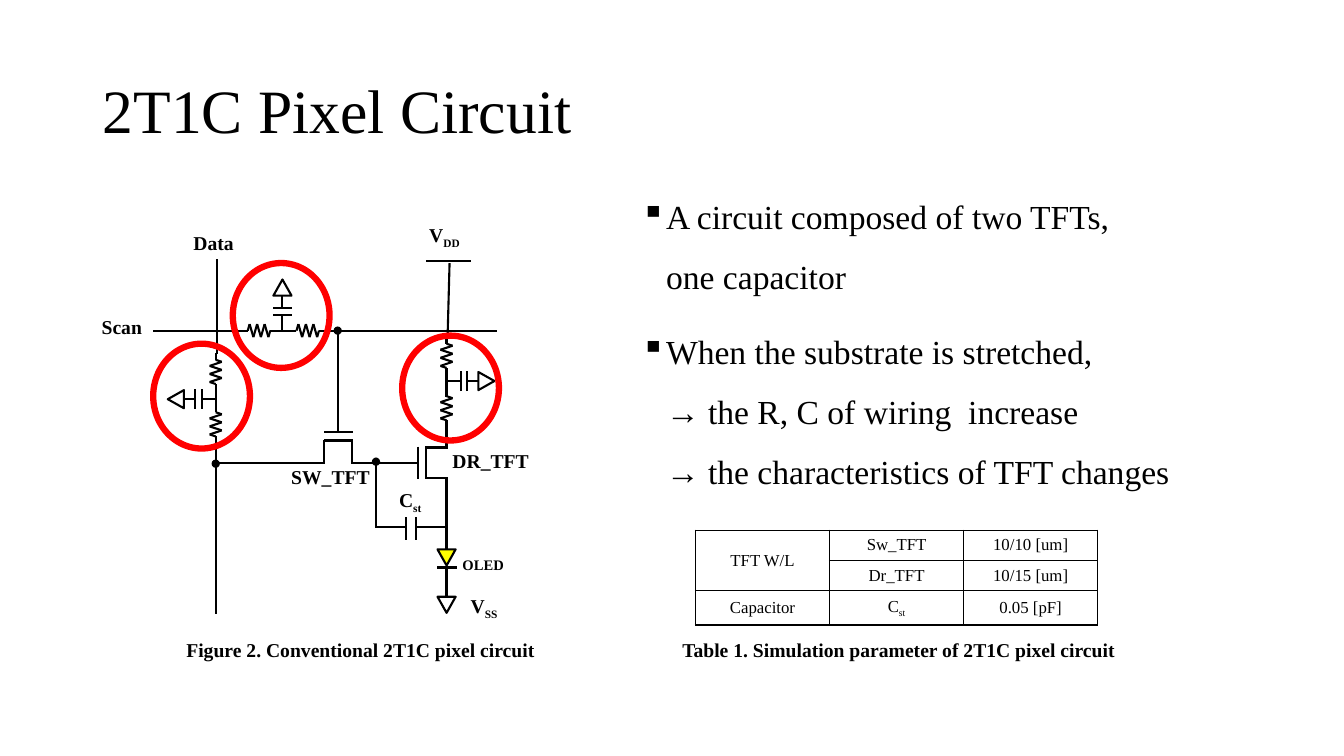
from dataclasses import dataclass
from itertools import pairwise
from typing import Optional

from lxml import etree
from pptx import Presentation, util as u
from pptx.dml.color import RGBColor
from pptx.enum import shapes, text
from pptx.oxml import ns

BLACK = RGBColor(0x00, 0x00, 0x00)
RED = RGBColor(0xFF, 0x00, 0x00)
YELLOW = RGBColor(0xFF, 0xFF, 0x00)
FONT = "Times New Roman"
GRID_STEP = u.Inches(0.1)
WIRE_WIDTH = u.Pt(1.5)
RESISTOR = [(0, 0), (0.7, 0), (0.9, -0.6), (1.3, 0.6), (1.7, -0.6), (2.1, 0.6),
            (2.5, -0.6), (2.9, 0.6), (3.1, 0), (3.8, 0)]
RESISTOR_STARTS = (0, 5.2)
TAP = 4.6
CAPACITOR = [((TAP, 0), (TAP, 1.4)), ((TAP - 1, 1.4), (TAP + 1, 1.4)),
             ((TAP - 1, 2.05), (TAP + 1, 2.05)), ((TAP, 2.05), (TAP, 3.15))]
GROUND_DISTANCE = 3.95


@dataclass(frozen=True)
class Wire:
    x1: float
    y1: float
    x2: float
    y2: float
    dot: bool = False


@dataclass(frozen=True)
class Ladder:
    origin: tuple[float, float]
    along: tuple[float, float]
    outward: tuple[float, float]
    rotation: int
    ring: tuple[float, float]

    def place(self, distance: float, offset: float) -> tuple[float, float]:
        return (self.origin[0] + distance * self.along[0] + offset * self.outward[0],
                self.origin[1] + distance * self.along[1] + offset * self.outward[1])


@dataclass(frozen=True)
class Label:
    name: str
    subscript: str
    left: float
    top: float
    width: float
    height: float = 3.7
    size: int = 14
    wrap: bool = False


WIRES = [
    Wire(21.5, 35.1, 21.5, 25.7), Wire(21.4, 38.1, 21.4, 40.5),
    Wire(32.2, 32.8, 49.3, 32.8), Wire(29.4, 32.8, 27.1, 32.8),
    Wire(15.2, 32.8, 24, 32.8),
    Wire(35, 42.9, 32.1, 42.9), Wire(35, 43.7, 32.1, 43.7),
    Wire(34.9, 43.7, 34.9, 46), Wire(32.1, 43.7, 32.1, 46),
    Wire(36.9, 45.9, 34.9, 45.9), Wire(21.4, 45.9, 32.1, 45.9),
    Wire(33.5, 32.8, 33.5, 42.8, True), Wire(37.3, 45.8, 37.3, 52.4, True),
    Wire(37.3, 52.3, 40.3, 52.3), Wire(40.3, 51.3, 40.3, 53.6),
    Wire(41.3, 51.3, 41.3, 53.6), Wire(41.3, 52.3, 44.4, 52.3),
    Wire(41.5, 44.3, 41.5, 47.5), Wire(42.3, 44.3, 42.3, 47.5),
    Wire(42.2, 44.4, 44.4, 44.4), Wire(42.2, 47.4, 44.4, 47.4),
    Wire(44.3, 42.2, 44.3, 44.5), Wire(44.3, 47.4, 44.3, 54.5),
    Wire(36.6, 45.9, 41.4, 45.9), Wire(45.3, 56.3, 43.4, 56.3),
    Wire(44.3, 59.2, 44.3, 56.3), Wire(42.3, 25.9, 46.7, 25.9),
    Wire(21.4, 46, 21.4, 60.9, True), Wire(21.4, 46, 21.4, 44),
    Wire(44.4, 33.6, 44.6, 26.1), Wire(44.3, 39.4, 44.3, 36.9),
]
LADDERS = [
    Ladder((32.3, 32.8), (-0.93, 0), (0, -1.08), 0, (23.1, 26.1)),
    Ladder((21.4, 35), (0, 1), (-1, 0), 270, (15.2, 34.1)),
    Ladder((44.3, 42.4), (0, -1), (1, 0), 90, (39.9, 33.3)),
]
LABELS = [
    Label("SW_TFT", "", 27.9, 45.6, 10.2),
    Label("DR_TFT", "", 43.9, 44, 9.9),
    Label("Data", "", 18.2, 22.4, 6.2),
    Label("Scan", "", 9.1, 30.8, 6.2),
    Label("V", "DD", 41.6, 21.6, 5.5),
    Label("C", "st", 38.6, 47.9, 4.5),
    Label("V", "SS", 45.7, 58.4, 5.1),
    Label("", "OLED", 44.9, 53, 7, 3.4, 18),
    Label("Figure 2. Conventional 2T1C pixel circuit", "", 17.5, 62.8, 47.1, 3.4, wrap=True),
    Label("Table 1. Simulation parameter of 2T1C pixel circuit", "", 66.7, 62.8, 47.1, 3.4, wrap=True),
]
BULLETS = [
    "A circuit composed of two TFTs, \vone capacitor",
    "When the substrate is stretched,\v→ the R, C of wiring  increase\v"
    "→ the characteristics of TFT changes",
]
PARAMETERS = [
    [("TFT W/L", ""), ("Sw_TFT", ""), ("10/10 [um]", "")],
    [("", ""), ("Dr_TFT", ""), ("10/15 [um]", "")],
    [("Capacitor", ""), ("C", "st"), ("0.05 [pF]", "")],
]
ROW_HEIGHTS = (3, 3, 3.4)


def grid(*steps: float) -> list[u.Emu]:
    return [u.Emu(round(step * GRID_STEP)) for step in steps]


def set_font(paragraph, size: int, bold: bool = False) -> None:
    font = paragraph.font
    font.name, font.size, font.bold = FONT, u.Pt(size), bold
    font.color.rgb = BLACK


def write_name(paragraph, name: str, subscript: str) -> None:
    if name:
        paragraph.add_run().text = name
    if subscript:
        run = paragraph.add_run()
        run.text = subscript
        run._r.get_or_add_rPr().set("baseline", "-25000")


def draw_wire(slide, wire: Wire) -> None:
    connector = slide.shapes.add_connector(
        shapes.MSO_CONNECTOR.STRAIGHT, *grid(wire.x1, wire.y1, wire.x2, wire.y2))
    connector.line.color.rgb = BLACK
    connector.line.width = WIRE_WIDTH
    if wire.dot:
        etree.SubElement(connector.line._get_or_add_ln(), ns.qn("a:headEnd"), type="oval")
    etree.SubElement(connector._element.spPr, ns.qn("a:effectLst"))


def draw_outline(slide, kind, left: float, top: float, width: float, height: float,
                 color: RGBColor = BLACK, line_width: u.Emu = WIRE_WIDTH,
                 fill: Optional[RGBColor] = None, rotation: int = 0) -> None:
    shape = slide.shapes.add_shape(kind, *grid(left, top, width, height))
    shape.shadow.inherit = False
    shape.rotation = rotation
    shape.line.color.rgb = color
    shape.line.width = line_width
    if fill is None:
        shape.fill.background()
    else:
        shape.fill.solid()
        shape.fill.fore_color.rgb = fill


def draw_triangle(slide, center: tuple[float, float], rotation: int,
                  fill: Optional[RGBColor] = None) -> None:
    draw_outline(slide, shapes.MSO_SHAPE.ISOSCELES_TRIANGLE, center[0] - 0.9,
                 center[1] - 0.8, 1.8, 1.6, fill=fill, rotation=rotation)


def draw_ladder(slide, ladder: Ladder) -> None:
    zigzags = [pair for start in RESISTOR_STARTS
               for pair in pairwise((start + step, side) for step, side in RESISTOR)]
    for begin, end in zigzags + CAPACITOR:
        draw_wire(slide, Wire(*ladder.place(*begin), *ladder.place(*end)))
    draw_triangle(slide, ladder.place(TAP, GROUND_DISTANCE), ladder.rotation)


def draw_label(slide, label: Label) -> None:
    box = slide.shapes.add_textbox(*grid(label.left, label.top, label.width, label.height))
    box.text_frame.word_wrap = label.wrap
    box.text_frame.auto_size = text.MSO_AUTO_SIZE.SHAPE_TO_FIT_TEXT
    paragraph = box.text_frame.paragraphs[0]
    write_name(paragraph, label.name, label.subscript)
    set_font(paragraph, label.size, bold=True)


def draw_title(slide) -> None:
    title = slide.shapes.title
    title.left, title.top, title.width, title.height = grid(9.2, 4, 115, 14.5)
    title.text_frame.text = "2T1C Pixel Circuit"
    title.text_frame.vertical_anchor = text.MSO_ANCHOR.MIDDLE
    paragraph = title.text_frame.paragraphs[0]
    paragraph.alignment = text.PP_ALIGN.LEFT
    paragraph.line_spacing = 0.9
    set_font(paragraph, 44)


def draw_bullets(slide) -> None:
    frame = slide.shapes.add_textbox(*grid(62.6, 16.9, 60.4, 47.6)).text_frame
    frame.word_wrap = True
    for index, bullet in enumerate(BULLETS):
        paragraph = frame.add_paragraph() if index else frame.paragraphs[0]
        paragraph.text = bullet
        properties = paragraph._p.get_or_add_pPr()
        properties.set("marL", str(u.Inches(0.25)))
        properties.set("indent", str(-u.Inches(0.25)))
        etree.SubElement(properties, ns.qn("a:buChar"), char="▪")
        paragraph.line_spacing = 1.5
        paragraph.space_before = u.Pt(10)
        set_font(paragraph, 24)


def format_cell(cell) -> None:
    cell.fill.background()
    cell.vertical_anchor = text.MSO_ANCHOR.MIDDLE
    properties = cell._tc.get_or_add_tcPr()
    for index, side in enumerate(("lnL", "lnR", "lnT", "lnB")):
        border = etree.Element(ns.qn(f"a:{side}"), w=str(u.Pt(1)))
        fill = etree.SubElement(border, ns.qn("a:solidFill"))
        etree.SubElement(fill, ns.qn("a:srgbClr"), val=str(BLACK))
        properties.insert(index, border)


def draw_table(slide) -> None:
    table = slide.shapes.add_table(3, 3, *grid(69, 52.6, 39.9, sum(ROW_HEIGHTS))).table
    table.first_row = table.horz_banding = False
    for row, height in zip(table.rows, grid(*ROW_HEIGHTS)):
        row.height = height
    for row, names in enumerate(PARAMETERS):
        for column, name in enumerate(names):
            cell = table.cell(row, column)
            format_cell(cell)
            paragraph = cell.text_frame.paragraphs[0]
            paragraph.alignment = text.PP_ALIGN.CENTER
            write_name(paragraph, *name)
            set_font(paragraph, 12)
    table.cell(0, 0).merge(table.cell(1, 0))


def main() -> None:
    presentation = Presentation()
    presentation.slide_width, presentation.slide_height = grid(133.33, 75)
    slide = presentation.slides.add_slide(presentation.slide_layouts.get_by_name("Title Only"))
    draw_title(slide)
    draw_bullets(slide)
    for wire in WIRES:
        draw_wire(slide, wire)
    for ladder in LADDERS:
        draw_ladder(slide, ladder)
    draw_triangle(slide, (44.3, 55.3), 180, YELLOW)
    draw_triangle(slide, (44.3, 60), 180)
    for label in LABELS:
        draw_label(slide, label)
    for ladder in LADDERS:
        draw_outline(slide, shapes.MSO_SHAPE.OVAL, *ladder.ring, 9.6, 10.4, RED, u.Pt(4.5))
    draw_table(slide)
    presentation.save("out.pptx")


if __name__ == "__main__":
    main()
